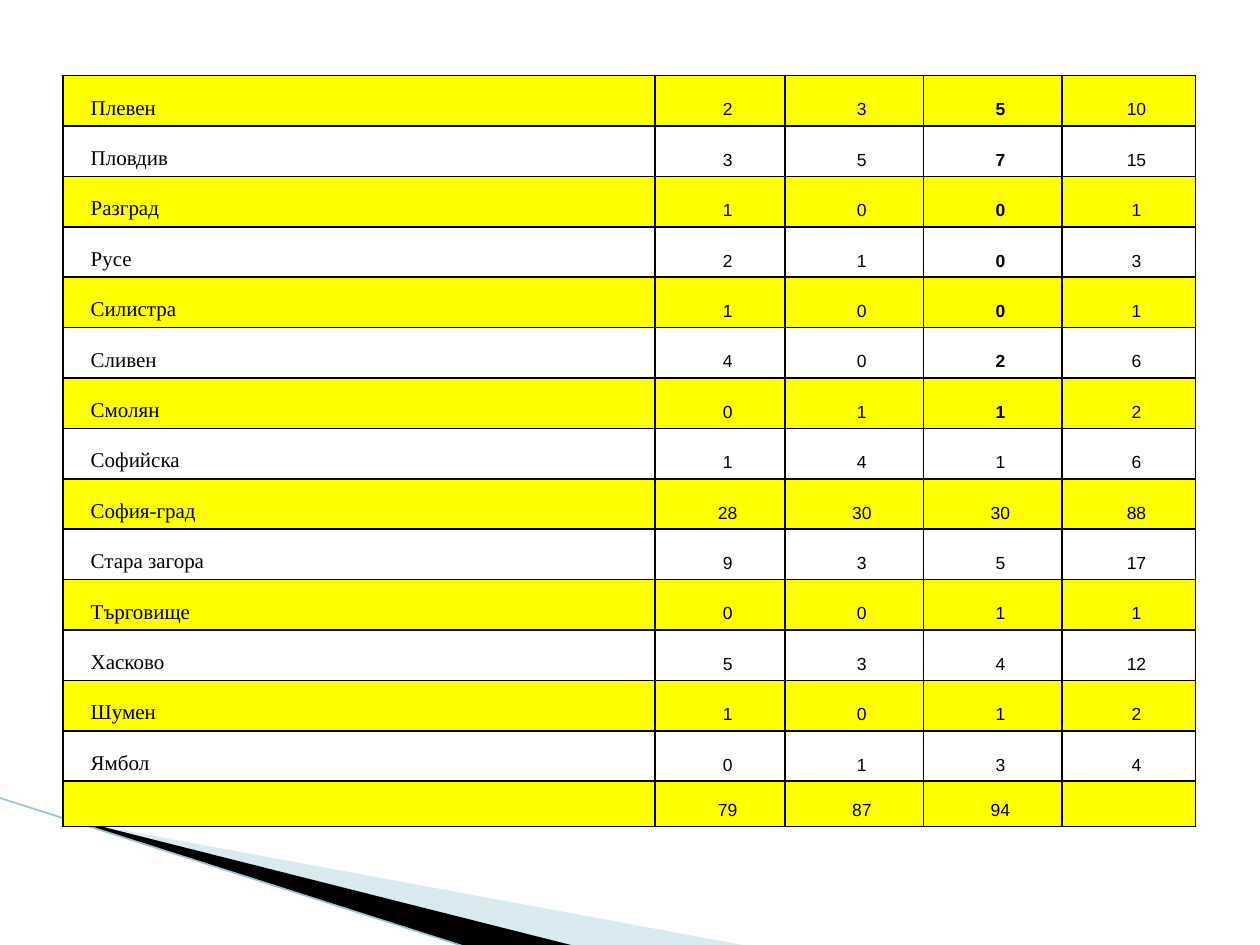
from typing import NamedTuple

from lxml import etree
from pptx import Presentation
from pptx import util as u
from pptx.dml.color import RGBColor
from pptx.enum import text
from pptx.oxml import parse_xml
from pptx.oxml.ns import nsdecls, qn

BLACK, WHITE, YELLOW = "000000", "FFFFFF", "FFFF00"
WIDTHS = [4.7, 1.03, 1.1, 1.1, 1.06]
ROW, LAST = 0.4, 0.36


class Region(NamedTuple):
    name: str
    counts: tuple
    bold: bool = False


class Wedge(NamedTuple):
    points: list
    color: str
    alpha: int = 100


REGIONS = [
    Region("Плевен", (2, 3, 5, 10), True),
    Region("Пловдив", (3, 5, 7, 15), True),
    Region("Разград", (1, 0, 0, 1), True),
    Region("Русе", (2, 1, 0, 3), True),
    Region("Силистра", (1, 0, 0, 1), True),
    Region("Сливен", (4, 0, 2, 6), True),
    Region("Смолян", (0, 1, 1, 2), True),
    Region("Софийска", (1, 4, 1, 6)),
    Region("София-град", (28, 30, 30, 88)),
    Region("Стара загора", (9, 3, 5, 17)),
    Region("Търговище", (0, 0, 1, 1)),
    Region("Хасково", (5, 3, 4, 12)),
    Region("Шумен", (1, 0, 1, 2)),
    Region("Ямбол", (0, 1, 3, 4)),
    Region("", (79, 87, 94, "")),
]
WEDGES = [
    Wedge([(0.55, 6.51), (5.95, 7.51), (4.56, 7.51), (0.55, 6.5)], "A0CBDC", 40),
    Wedge([(0.53, 6.49), (4.57, 7.51), (3.72, 7.52), (0.54, 6.5)], BLACK),
]


def paint(fill, color: str) -> None:
    fill.solid()
    fill.fore_color.rgb = RGBColor.from_string(color)


def draw_wedge(slide, wedge: Wedge) -> None:
    pts = [(u.Inches(x), u.Inches(y)) for x, y in wedge.points]
    pen = slide.shapes.build_freeform(*pts[0])
    pen.add_line_segments(pts[1:], close=True)
    shape = pen.convert_to_shape()
    shape.shadow.inherit = False
    shape.line.fill.background()
    paint(shape.fill, wedge.color)
    if wedge.alpha < 100:
        tone = shape.fill._xPr.find(".//" + qn("a:srgbClr"))
        etree.SubElement(tone, qn("a:alpha"), val=str(wedge.alpha * 1000))


def draw_edge(slide) -> None:
    ends = [u.Inches(n) for n in (-0.01, 6.33, 3.71, 7.52)]
    edge = slide.shapes.add_connector(1, *ends)
    paint(edge.line.fill, "97C5D8")
    edge.line.width = u.Pt(0.95)
    etree.SubElement(edge._element.spPr, qn("a:effectLst"))


def add_borders(cell) -> None:
    props = cell._tc.get_or_add_tcPr()
    for side in "LRTB":
        props.append(parse_xml(
            f'<a:ln{side} {nsdecls("a")} w="12700"><a:solidFill>'
            f'<a:srgbClr val="{BLACK}"/></a:solidFill></a:ln{side}>'))


def fill_cell(cell, value, color: str, is_name: bool, bold: bool) -> None:
    add_borders(cell)
    paint(cell.fill, color)
    cell.vertical_anchor = text.MSO_ANCHOR.BOTTOM
    para = cell.text_frame.paragraphs[0]
    para.text = str(value)
    props = para._p.get_or_add_pPr()
    props.set("marL", str(u.Inches(0.4)))
    props.set("indent", str(u.Inches(-0.28)))
    para.alignment = text.PP_ALIGN.LEFT if is_name else text.PP_ALIGN.CENTER
    if not para.runs:
        para._p.get_or_add_endParaRPr().set("sz", "1000")
    for run in para.runs:
        run.font.name = "Times New Roman" if is_name else "Arial"
        run.font.size = u.Pt(12 if is_name else 10)
        run.font.bold = bold
        run.font.color.rgb = RGBColor.from_string(BLACK)


def draw_table(slide) -> None:
    heights = [ROW] * (len(REGIONS) - 1) + [LAST]
    frame = slide.shapes.add_table(
        len(REGIONS), len(WIDTHS), u.Inches(0.5), u.Inches(0.6),
        u.Inches(sum(WIDTHS)), u.Inches(sum(heights)))
    table = frame.table
    table.first_row = table.horz_banding = False
    for col, width in zip(table.columns, WIDTHS):
        col.width = u.Inches(width)
    for row, height in zip(table.rows, heights):
        row.height = u.Inches(height)
    for r, region in enumerate(REGIONS):
        color = WHITE if r % 2 else YELLOW
        for c, value in enumerate((region.name, *region.counts)):
            fill_cell(table.cell(r, c), value, color, c == 0,
                      region.bold and c == 3)


def main() -> None:
    deck = Presentation()
    deck.slide_width, deck.slide_height = u.Inches(10), u.Inches(7.5)
    slide = deck.slides.add_slide(deck.slide_layouts[6])
    for wedge in WEDGES:
        draw_wedge(slide, wedge)
    draw_edge(slide)
    draw_table(slide)
    deck.save("out.pptx")


if __name__ == "__main__":
    main()
